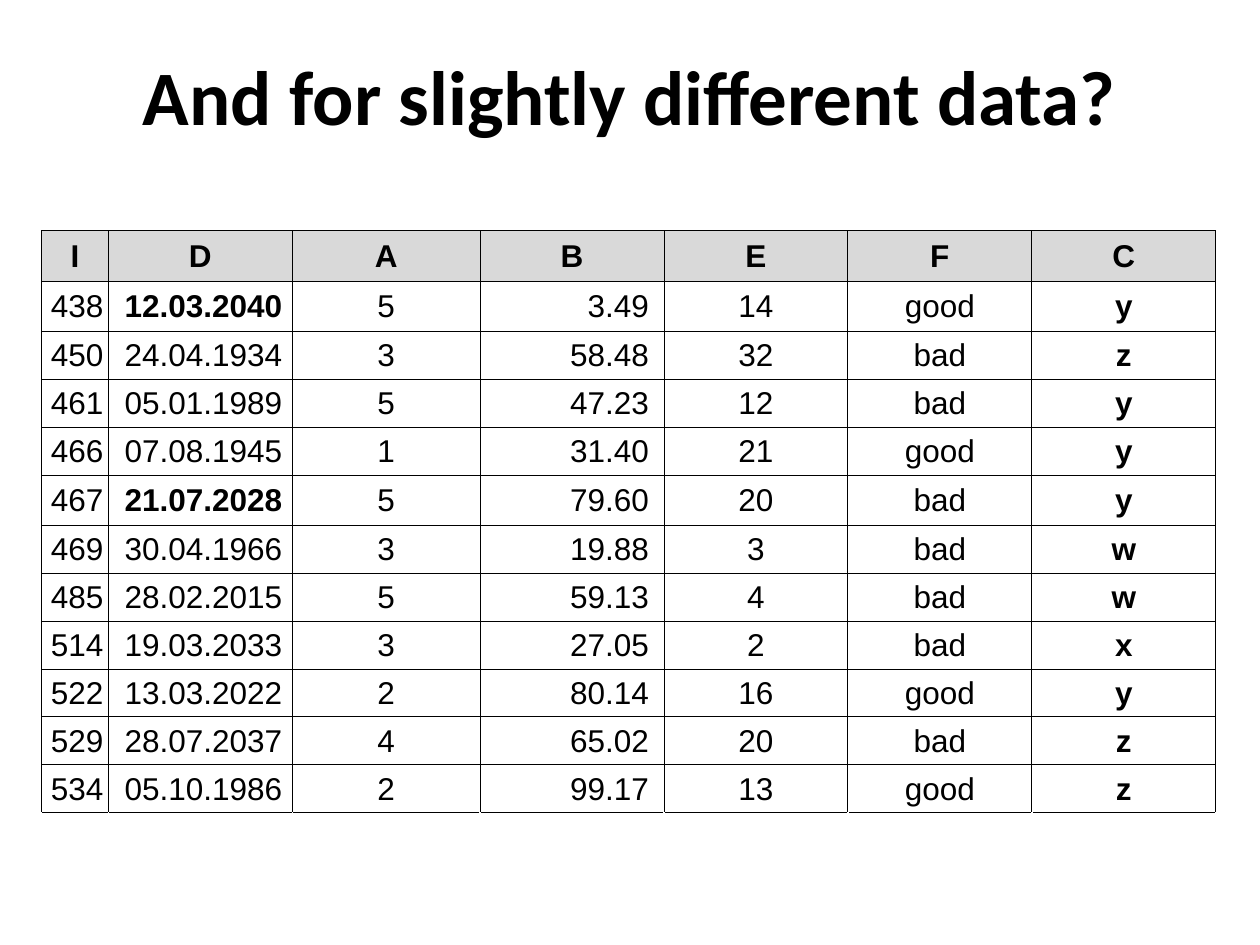
from lxml import etree
from pptx import Presentation
from pptx.dml.color import RGBColor
from pptx.enum.text import MSO_ANCHOR, PP_ALIGN
from pptx.oxml.ns import qn
from pptx.util import Inches, Pt

MIDDLE = MSO_ANCHOR.MIDDLE
CENTER, RIGHT = PP_ALIGN.CENTER, PP_ALIGN.RIGHT
COLORS = {"ink": "000000", "header": "D9D9D9"}
TITLE = "And for slightly different data?"
COLUMNS = [
    ("I", 0.53, RIGHT, 0.04),
    ("D", 1.46, RIGHT, 0.08),
    ("A", 1.49, CENTER, 0.01),
    ("B", 1.46, RIGHT, 0.12),
    ("E", 1.46, CENTER, 0.01),
    ("F", 1.46, CENTER, 0.01),
    ("C", 1.46, CENTER, 0.01),
]
RECORDS = [
    ("438", "12.03.2040", "5", "3.49", "14", "good", "y"),
    ("450", "24.04.1934", "3", "58.48", "32", "bad", "z"),
    ("461", "05.01.1989", "5", "47.23", "12", "bad", "y"),
    ("466", "07.08.1945", "1", "31.40", "21", "good", "y"),
    ("467", "21.07.2028", "5", "79.60", "20", "bad", "y"),
    ("469", "30.04.1966", "3", "19.88", "3", "bad", "w"),
    ("485", "28.02.2015", "5", "59.13", "4", "bad", "w"),
    ("514", "19.03.2033", "3", "27.05", "2", "bad", "x"),
    ("522", "13.03.2022", "2", "80.14", "16", "good", "y"),
    ("529", "28.07.2037", "4", "65.02", "20", "bad", "z"),
    ("534", "05.10.1986", "2", "99.17", "13", "good", "z"),
]
BOLD_DATES = {"12.03.2040", "21.07.2028"}
TALL, NORMAL, EMPTY = 0.4, 0.38, 0.53


def style_font(font, name, size, bold):
    font.name, font.size, font.bold = name, Pt(size), bold
    font.color.rgb = RGBColor.from_string(COLORS["ink"])


def add_borders(cell, sides):
    properties = cell._tc.get_or_add_tcPr()
    for side in sides:
        line = etree.SubElement(properties, qn(f"a:ln{side}"), w=str(Pt(0.5)))
        fill = etree.SubElement(line, qn("a:solidFill"))
        etree.SubElement(fill, qn("a:srgbClr"), val=COLORS["ink"])


def fill_cell(cell, text, align, right_margin, bold):
    cell.vertical_anchor = MIDDLE
    cell.margin_left = cell.margin_top = Inches(0.01)
    cell.margin_right, cell.margin_bottom = Inches(right_margin), 0
    cell.text = text
    para = cell.text_frame.paragraphs[0]
    para.alignment = align
    style_font(para.font, "Arial", 18, bold)
    add_borders(cell, "LRTB")


def add_data_table(slide):
    heights = [TALL]
    heights += [TALL if record[1] in BOLD_DATES else NORMAL for record in RECORDS]
    heights.append(EMPTY)
    frame = slide.shapes.add_table(
        len(heights), len(COLUMNS), Inches(0.33), Inches(1.83),
        Inches(sum(column[1] for column in COLUMNS)), Inches(sum(heights)))
    table = frame.table
    table.first_row = table.horz_banding = False
    for row, height in zip(table.rows, heights):
        row.height = Inches(height)
    for index, (name, width, align, margin) in enumerate(COLUMNS):
        table.columns[index].width = Inches(width)
        header = table.cell(0, index)
        fill_cell(header, name, CENTER, 0.01, True)
        header.fill.solid()
        header.fill.fore_color.rgb = RGBColor.from_string(COLORS["header"])
        for number, record in enumerate(RECORDS, 1):
            cell = table.cell(number, index)
            bold = name == "C" or record[index] in BOLD_DATES
            fill_cell(cell, record[index], align, margin, bold)
            cell.fill.background()
        blank = table.cell(len(heights) - 1, index)
        add_borders(blank, "T")
        blank.fill.background()


def add_title(slide):
    title = slide.shapes.title
    title.left, title.top = Inches(0.99), Inches(0.33)
    title.width, title.height = Inches(8.02), Inches(0.84)
    title.text = TITLE
    title.text_frame.word_wrap = False
    title.text_frame.vertical_anchor = MIDDLE
    para = title.text_frame.paragraphs[0]
    para.alignment = CENTER
    style_font(para.font, "Calibri", 44, True)


def main():
    deck = Presentation()
    deck.slide_width, deck.slide_height = Inches(10), Inches(7.5)
    slide = deck.slides.add_slide(deck.slide_layouts[5])
    add_data_table(slide)
    add_title(slide)
    deck.save("out.pptx")


if __name__ == "__main__":
    main()
